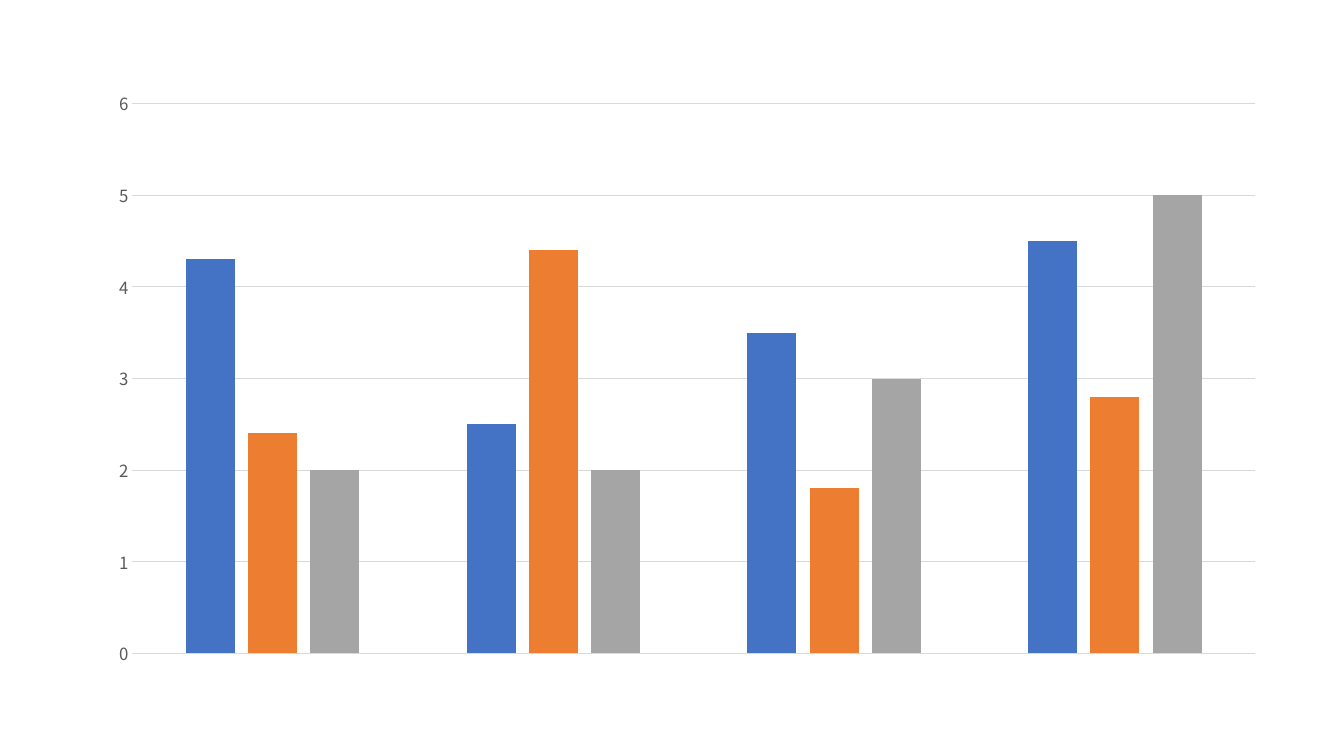
from pptx import Presentation
from pptx.chart.data import CategoryChartData
from pptx.dml.color import RGBColor
from pptx.enum.chart import XL_CHART_TYPE as ChartType, XL_TICK_MARK as TickMark
from pptx.oxml import parse_xml
from pptx.oxml.ns import nsdecls, qn
from pptx.util import Cm, Pt

COLOURS = {
    "Series 1": "4472C4",
    "Series 2": "ED7D31",
    "Series 3": "A5A5A5",
    "label": "595959",
    "grid": "D9D9D9",
    "text": "000000",
}
FONT = "Noto Sans CJK SC"
SERIES = {
    "Series 1": (4.3, 2.5, 3.5, 4.5),
    "Series 2": (2.4, 4.4, 1.8, 2.8),
    "Series 3": (2, 2, 3, 5),
}
PLOT_FRAME = {"x": 0.03, "y": 0.04, "w": 0.95, "h": 0.92}

deck = Presentation()
deck.slide_width, deck.slide_height = Cm(33.87), Cm(19.05)
page = deck.slides.add_slide(deck.slide_layouts[6])

data = CategoryChartData()
data.categories = ["1", "2", "3", "4"]
for name, values in SERIES.items():
    data.add_series(name, values)

chart = page.shapes.add_chart(
    ChartType.COLUMN_CLUSTERED, Cm(2.44), Cm(2.01), Cm(29.79), Cm(15.06), data
).chart
chart.has_title = False
chart.has_legend = False
chart.category_axis.visible = False

value_axis = chart.value_axis
axis_format = {
    "minimum_scale": 0,
    "maximum_scale": 6,
    "major_unit": 1,
    "major_tick_mark": TickMark.NONE,
    "minor_tick_mark": TickMark.NONE,
    "has_major_gridlines": True,
}
for attribute, value in axis_format.items():
    setattr(value_axis, attribute, value)
value_axis.format.line.fill.background()
grid_line = value_axis.major_gridlines.format.line
grid_line.width = Pt(0.75)
grid_line.color.rgb = RGBColor.from_string(COLOURS["grid"])

for font, size, colour in (
    (chart.font, 10, "text"),
    (value_axis.tick_labels.font, 12, "label"),
):
    font.name = FONT
    font.size = Pt(size)
    font.color.rgb = RGBColor.from_string(COLOURS[colour])

plot = chart.plots[0]
for attribute, value in {"gap_width": 219, "overlap": -27, "vary_by_categories": False}.items():
    setattr(plot, attribute, value)
for series in plot.series:
    series.format.fill.solid()
    series.format.fill.fore_color.rgb = RGBColor.from_string(COLOURS[series.name])

plot_area = chart.element.find(".//" + qn("c:plotArea"))
for layout in plot_area.findall(qn("c:layout")):
    plot_area.remove(layout)
sizes = "".join(f'<c:{key} val="{value}"/>' for key, value in PLOT_FRAME.items())
plot_area.insert(0, parse_xml(
    f'<c:layout {nsdecls("c")}><c:manualLayout><c:layoutTarget val="inner"/>'
    f'<c:xMode val="edge"/><c:yMode val="edge"/>{sizes}</c:manualLayout></c:layout>'
))

deck.save("out.pptx")
